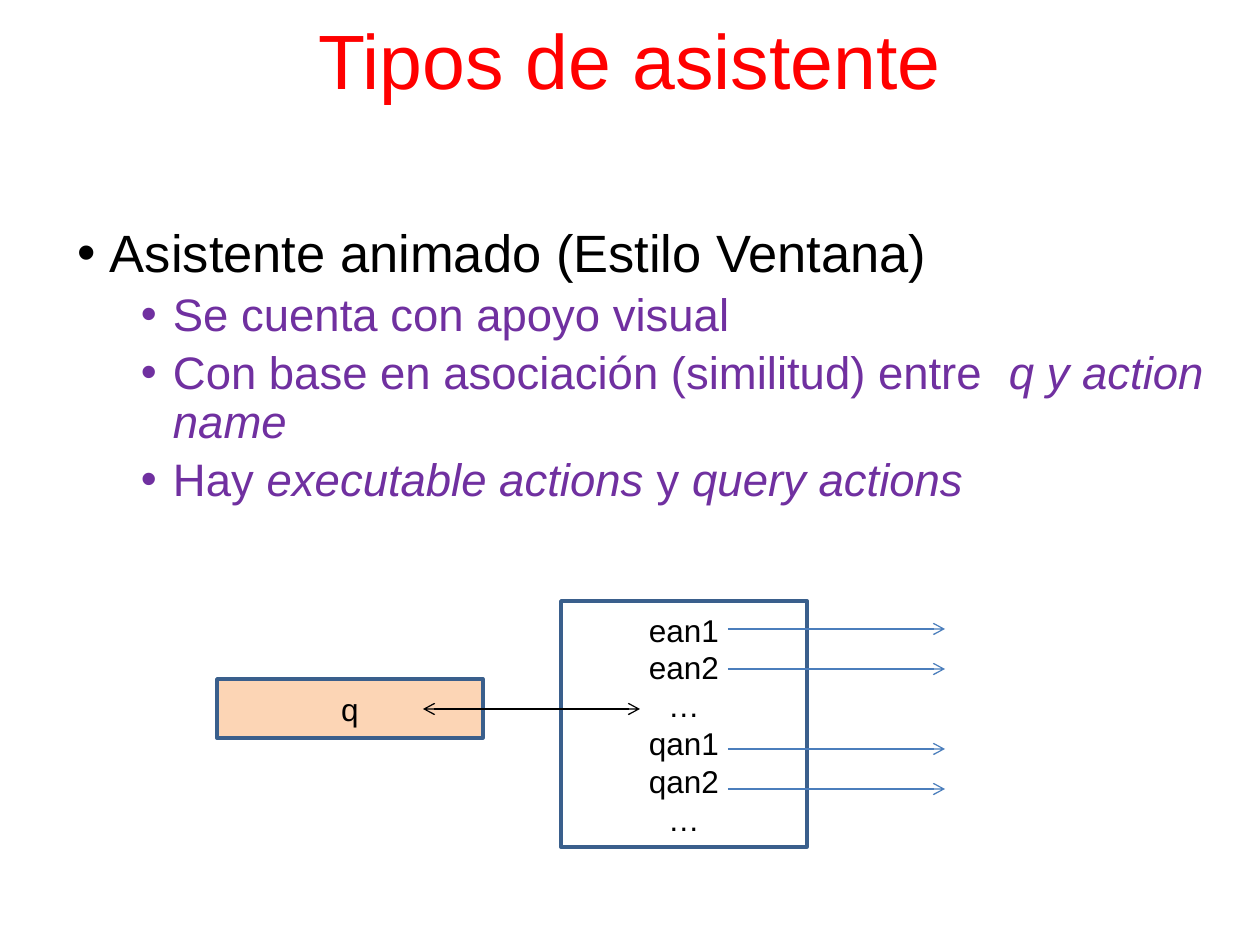
import pptx
import pptx.dml.color
import pptx.enum.shapes
import pptx.enum.text
import pptx.oxml.ns
import pptx.util
import lxml.etree

PX = 914400 / 126
COLORS = {
    "title": "FF0000", "text": "000000", "detail": "7030A0", "query": "FCD5B5",
    "actions": "FFFFFF", "border": "3A5F8C", "call": "4B7EBC",
}
ALIGN = pptx.enum.text.PP_ALIGN
MIDDLE = pptx.enum.text.MSO_ANCHOR.MIDDLE
HEADING = {"alignment": ALIGN.CENTER, "line_spacing": 0.9}
CENTERED = {"alignment": ALIGN.CENTER}
POINT = {"line_spacing": 0.9, "space_before": pptx.util.Pt(10), "level": 0}
SUBPOINT = {"line_spacing": 0.9, "space_before": pptx.util.Pt(5), "level": 1}
NO_INSETS = {"margin_left": 0, "margin_top": 0, "margin_right": 0,
             "margin_bottom": 0, "word_wrap": True}


def emu(px):
    return pptx.util.Emu(round(px * PX))


def rgb(name):
    return pptx.dml.color.RGBColor.from_string(COLORS[name])


def apply(target, values):
    for name, value in values.items():
        setattr(target, name, value)


def write(paragraph, runs, size, color, layout):
    """Fill a paragraph with (text, italic) runs."""
    apply(paragraph, layout)
    for text, italic in runs:
        run = paragraph.add_run()
        run.text = text
        apply(run.font, {"name": "Arial", "size": pptx.util.Pt(size), "italic": italic})
        run.font.color.rgb = rgb(color)


def add_bullet(paragraph, indent, hanging):
    properties = paragraph._p.get_or_add_pPr()
    properties.set("marL", str(emu(indent)))
    properties.set("indent", str(-emu(hanging)))
    for tag, key, value in (("a:buFont", "typeface", "Arial"), ("a:buChar", "char", "•")):
        mark = lxml.etree.SubElement(properties, pptx.oxml.ns.qn(tag))
        mark.set(key, value)


def add_title(slide, left, top, width, height):
    title = slide.shapes.add_textbox(*map(emu, (left, top, width, height))).text_frame
    apply(title, {**NO_INSETS, "vertical_anchor": MIDDLE})
    write(title.paragraphs[0], [("Tipos de asistente", False)], 44, "title", HEADING)


def add_points(slide, left, top, width, height):
    body = slide.shapes.add_textbox(*map(emu, (left, top, width, height))).text_frame
    apply(body, NO_INSETS)
    main_point = body.paragraphs[0]
    write(main_point, [("Asistente animado (Estilo Ventana)", False)], 30, "text", POINT)
    add_bullet(main_point, 32, 32)
    details = [
        [("Se cuenta con apoyo visual", False)],
        [("Con base en asociación (similitud) entre  ", False), ("q y action name", True)],
        [("Hay ", False), ("executable actions", True), (" y ", False),
         ("query actions", True)],
    ]
    for runs in details:
        detail = body.add_paragraph()
        write(detail, runs, 26, "detail", SUBPOINT)
        add_bullet(detail, 95, 32)


def add_labelled_box(slide, left, top, width, height, fill, labels):
    box = slide.shapes.add_shape(pptx.enum.shapes.MSO_SHAPE.RECTANGLE,
                                 *map(emu, (left, top, width, height)))
    box.shadow.inherit = False
    box.fill.solid()
    box.fill.fore_color.rgb = rgb(fill)
    box.line.color.rgb = rgb("border")
    box.line.width = pptx.util.Pt(2)
    frame = box.text_frame
    frame.vertical_anchor = MIDDLE
    for index, label in enumerate(labels):
        paragraph = frame.add_paragraph() if index else frame.paragraphs[0]
        write(paragraph, [(label, False)], 18, "text", CENTERED)


def add_arrow(slide, left, right, y, color, ends):
    arrow = slide.shapes.add_connector(pptx.enum.shapes.MSO_CONNECTOR.STRAIGHT,
                                       *map(emu, (left, y, right, y)))
    arrow.line.color.rgb = rgb(color)
    arrow.line.width = pptx.util.Pt(0.75)
    line = arrow.line._get_or_add_ln()
    for end in ends:
        lxml.etree.SubElement(line, pptx.oxml.ns.qn(end)).set("type", "arrow")
    lxml.etree.SubElement(arrow._element.spPr, pptx.oxml.ns.qn("a:effectLst"))


def add_matching_diagram(slide, left, top, width, height):
    middle = top + height // 2
    reach = 217
    actions_left = left + 344
    # Query and the list of action names
    add_labelled_box(slide, left, middle - 45, 266, 59, "query", ["q"])
    names = ["ean1", "ean2", "…", "qan1", "qan2", "…"]
    add_labelled_box(slide, actions_left, top, 246, height, "actions", names)
    # One call per named action
    for row, name in enumerate(names):
        if name != "…":
            add_arrow(slide, left + width - reach, left + width, top + 28 + 40 * row,
                      "call", ["a:tailEnd"])
    # Similarity between the query and the names
    add_arrow(slide, left + 206, left + 206 + reach, top + 108, "text",
              ["a:headEnd", "a:tailEnd"])


def main():
    deck = pptx.Presentation()
    apply(deck, {"slide_width": emu(1260), "slide_height": emu(945)})
    slide = deck.slides.add_slide(deck.slide_layouts[6])
    add_title(slide, 0, 0, 1260, 130)
    add_points(slide, 78, 227, 1134, 246)
    add_matching_diagram(slide, 217, 601, 728, 246)
    deck.save("out.pptx")


if __name__ == "__main__":
    main()
